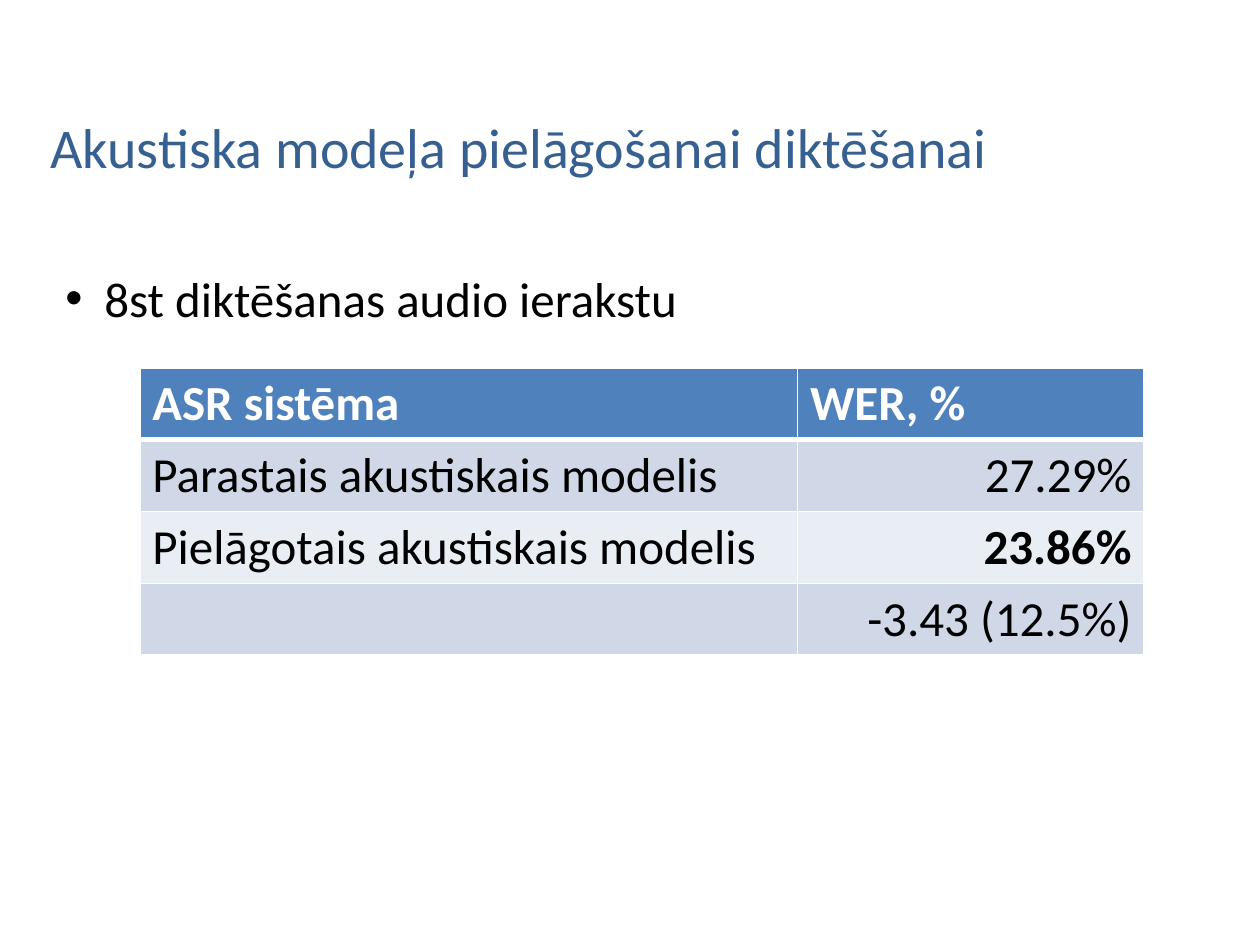
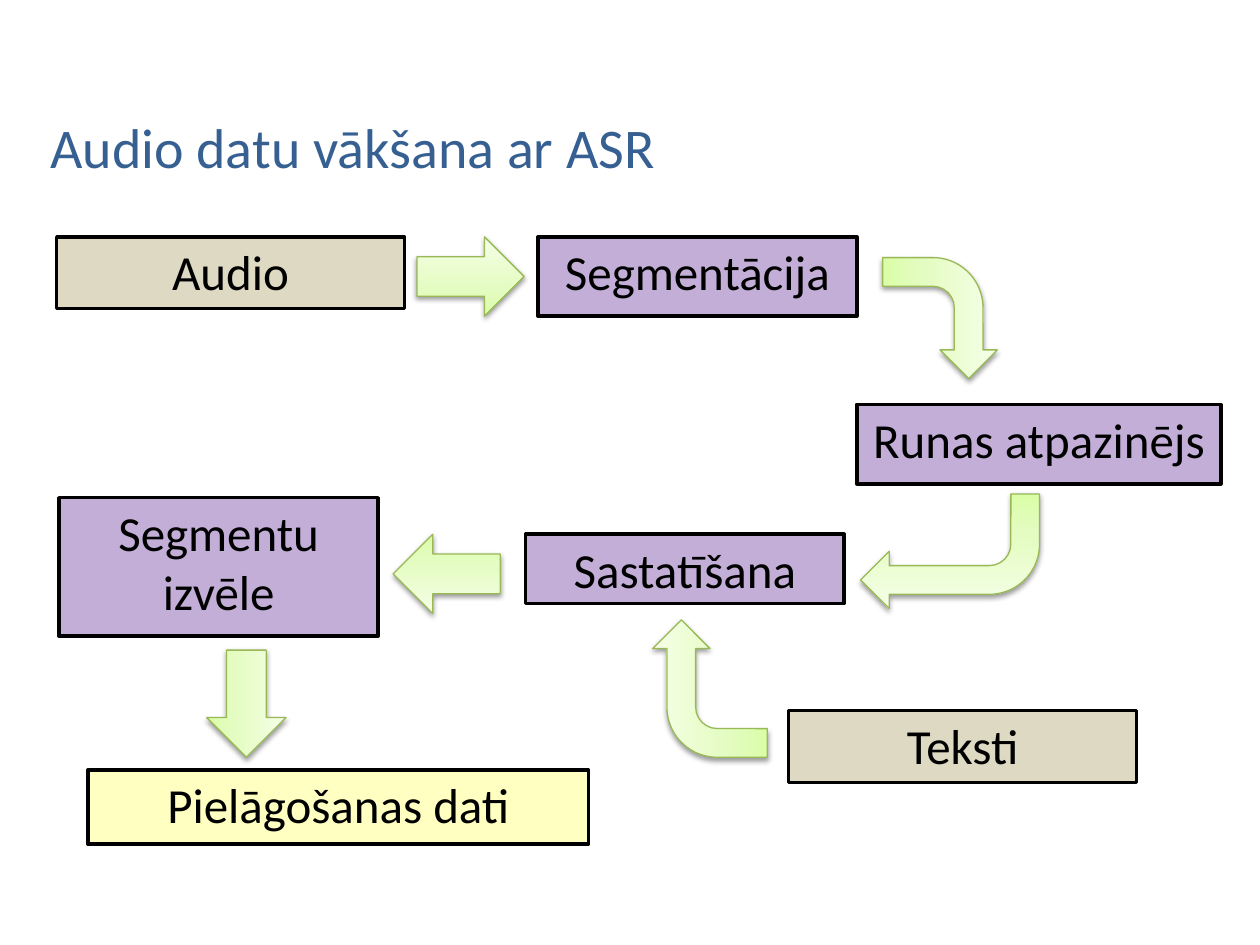
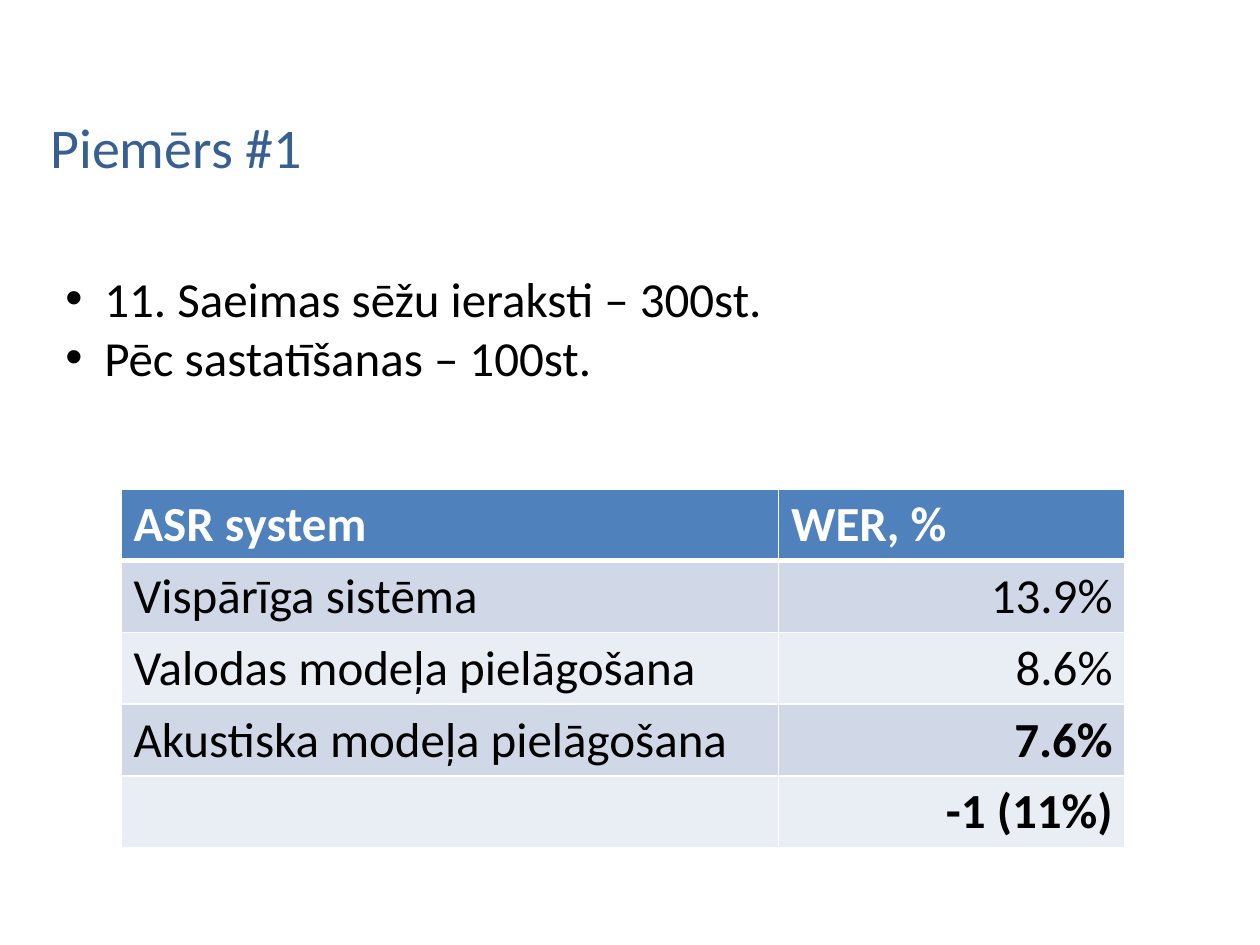
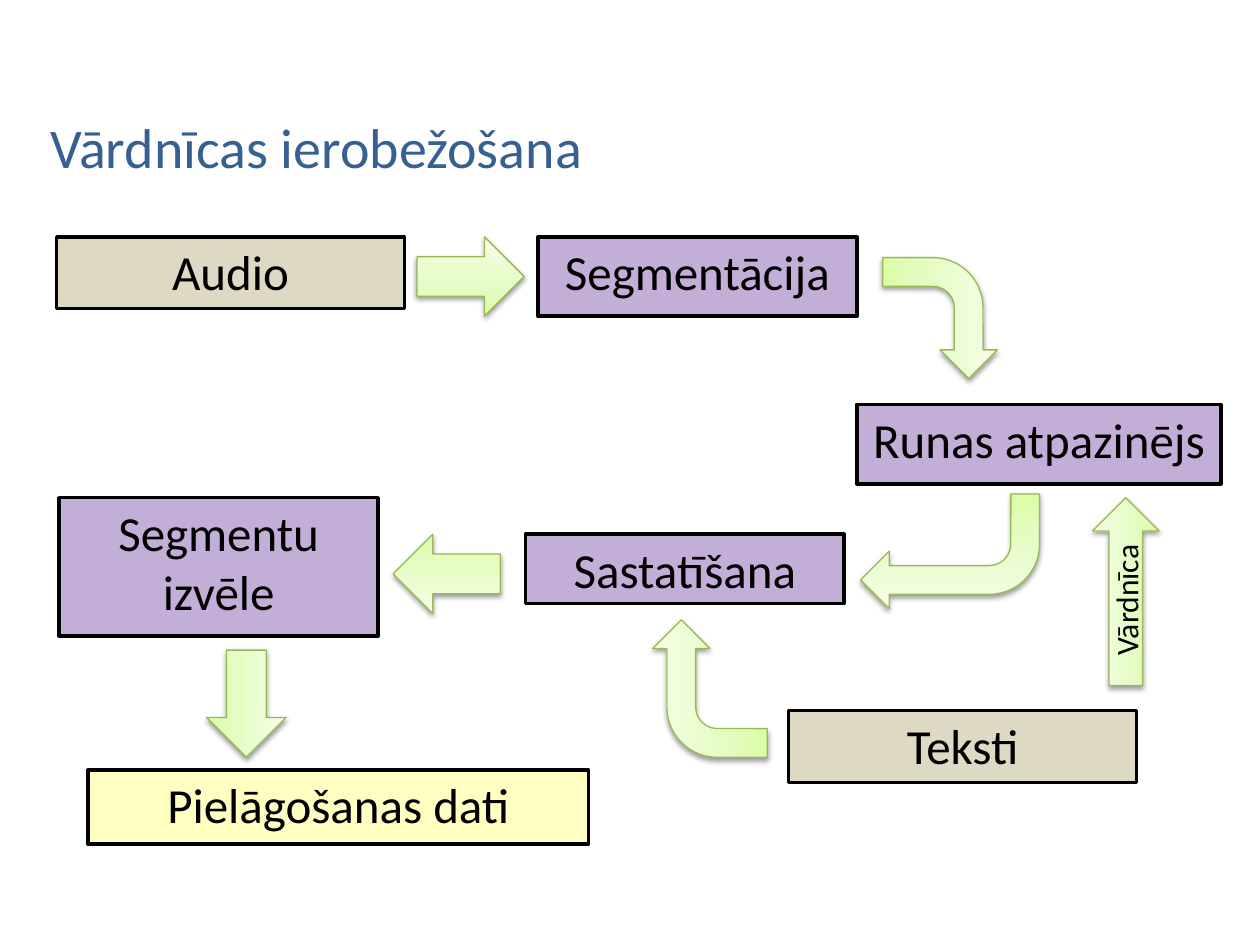
from dataclasses import dataclass

from lxml.etree import SubElement
from pptx import Presentation
from pptx.dml.color import RGBColor
from pptx.enum.shapes import MSO_SHAPE as SHAPE
from pptx.enum.text import MSO_ANCHOR as ANCHOR, MSO_AUTO_SIZE as AUTO, PP_ALIGN as ALIGN
from pptx.oxml.ns import qn
from pptx.util import Inches, Pt


@dataclass(frozen=True)
class Theme:
    font: str = "Calibri"
    title_size: int = 32
    body_size: int = 28
    label_size: int = 18
    title: str = "376092"
    text: str = "000000"
    white: str = "FFFFFF"
    header: str = "4F81BD"
    bands: tuple = ("D0D8E8", "E9EDF4")
    source: str = "DDD9C3"
    process: str = "C2AED7"
    result: str = "FFFFC2"
    arrow_stops: tuple = ((0, "DAFDA7"), (35, "E4FCC2"), (100, "F5FFE7"))
    arrow_line: str = "98B955"


@dataclass(frozen=True)
class Box:
    left: float
    top: float
    width: float
    height: float

    def inside(self, region):
        return Box(region.left + self.left, region.top + self.top, self.width, self.height)

    def lengths(self):
        return [Inches(v) for v in (self.left, self.top, self.width, self.height)]


THEME = Theme()
FLOW_REGION = Box(0.45, 1.88, 9.24, 4.82)

# Flow steps: text, colour, box within the flow region
STEPS = [
    ("Audio", THEME.source, Box(0, 0, 2.76, 0.57)),
    ("Segmentācija", THEME.process, Box(3.82, 0, 2.53, 0.63)),
    ("Runas atpazinējs", THEME.process, Box(6.35, 1.33, 2.89, 0.63)),
    ("Sastatīšana", THEME.process, Box(3.72, 2.36, 2.53, 0.55)),
    ("Segmentu izvēle", THEME.process, Box(0.02, 2.07, 2.53, 1.1)),
    ("Teksti", THEME.source, Box(5.81, 3.76, 2.76, 0.57)),
    ("Pielāgošanas dati", THEME.result, Box(0.25, 4.23, 3.97, 0.59)),
]

# Flow arrows: outline, rotation, unrotated box within the flow region
ARROWS = [
    (SHAPE.RIGHT_ARROW, 0, Box(2.86, 0, 0.85, 0.63)),
    (SHAPE.BENT_ARROW, 90, Box(6.53, 0.19, 0.96, 0.91)),
    (SHAPE.BENT_ARROW, 180, Box(6.38, 2.04, 1.42, 0.91)),
    (SHAPE.BENT_ARROW, 270, Box(4.64, 3.13, 1.09, 0.91)),
    (SHAPE.RIGHT_ARROW, 180, Box(2.67, 2.36, 0.85, 0.63)),
    (SHAPE.RIGHT_ARROW, 90, Box(1.08, 3.39, 0.85, 0.63)),
]
DICTIONARY_ARROW = (SHAPE.RIGHT_ARROW, 270, Box(7.74, 2.55, 1.49, 0.53))


def rgb(colour):
    return RGBColor.from_string(colour)


def set_font(paragraph, size, colour, bold=False):
    font = paragraph.font
    font.name, font.size, font.bold = THEME.font, Pt(size), bold
    font.color.rgb = rgb(colour)


def add_colour(parent, colour):
    return SubElement(parent, qn("a:srgbClr"), val=colour)


# Title
def add_titled_slide(deck, text, height=0.83):
    slide = deck.slides.add_slide(deck.slide_layouts[5])
    title = slide.shapes.title
    title.left, title.top, title.width, title.height = Box(0.3, 0.58, 9.17, height).lengths()
    frame = title.text_frame
    frame.text = text
    frame.vertical_anchor = ANCHOR.TOP
    frame.auto_size = AUTO.SHAPE_TO_FIT_TEXT
    heading = frame.paragraphs[0]
    heading.alignment, heading.line_spacing = ALIGN.LEFT, 1.5
    set_font(heading, THEME.title_size, THEME.title)
    return slide


# Bullet list
def add_bullets(slide, box, items):
    frame = slide.shapes.add_textbox(*box.lengths()).text_frame
    frame.word_wrap = True
    frame.auto_size = AUTO.SHAPE_TO_FIT_TEXT
    frame.text = "\n".join(items)
    indent = Inches(0.31)
    for bullet in frame.paragraphs:
        set_font(bullet, THEME.body_size, THEME.text)
        props = bullet._p.get_or_add_pPr()
        props.set("marL", str(indent))
        props.set("indent", str(-indent))
        font_tag, char_tag = (props.makeelement(qn(tag), {key: value}) for tag, key, value in
                              (("a:buFont", "typeface", "Arial"), ("a:buChar", "char", "•")))
        props.insert(0, font_tag)
        props.insert(1, char_tag)


# Results table
def set_borders(cell, top, bottom):
    props = cell._tc.get_or_add_tcPr()
    widths = {"a:lnL": 1, "a:lnR": 1, "a:lnT": top, "a:lnB": bottom}
    for place, (tag, width) in enumerate(widths.items()):
        line = props.makeelement(qn(tag), {"w": str(Pt(width))})
        add_colour(SubElement(line, qn("a:solidFill")), THEME.white)
        props.insert(place, line)


def add_results(slide, left, top, rows, bold_values):
    row_height, widths = 0.57, (5.22, 2.75)
    box = Box(left, top, sum(widths), row_height * len(rows))
    results = slide.shapes.add_table(len(rows), len(widths), *box.lengths()).table
    for column, width in zip(results.columns, widths):
        column.width = Inches(width)
    for r, row in enumerate(rows):
        is_header = r == 0
        for c, text in enumerate(row):
            cell = results.cell(r, c)
            cell.text = text
            cell.fill.solid()
            cell.fill.fore_color.rgb = rgb(THEME.header if is_header else THEME.bands[(r - 1) % 2])
            set_borders(cell, top=3 if r == 1 else 1, bottom=3 if is_header else 1)
            entry = cell.text_frame.paragraphs[0]
            entry.alignment = ALIGN.RIGHT if c and not is_header else ALIGN.LEFT
            set_font(entry, THEME.body_size, THEME.white if is_header else THEME.text,
                     is_header or text in bold_values)


# Flow diagram
def add_step(slide, box, text, colour):
    step = slide.shapes.add_shape(SHAPE.FLOWCHART_PROCESS, *box.lengths())
    step.shadow.inherit = False
    step.fill.solid()
    step.fill.fore_color.rgb = rgb(colour)
    step.line.color.rgb = rgb(THEME.text)
    step.line.width = Pt(2)
    frame = step.text_frame
    frame.margin_left = frame.margin_right = frame.margin_top = frame.margin_bottom = Inches(0.04)
    frame.vertical_anchor = ANCHOR.TOP
    frame.text = text
    frame.paragraphs[0].alignment = ALIGN.CENTER
    set_font(frame.paragraphs[0], THEME.body_size, THEME.text)


def add_arrow(slide, box, outline, rotation):
    arrow = slide.shapes.add_shape(outline, *box.lengths())
    arrow.rotation = rotation
    arrow.line.color.rgb = rgb(THEME.arrow_line)
    arrow.line.width = Pt(0.75)

    # Three-stop gradient running upwards
    arrow.fill.gradient()
    arrow.fill.gradient_angle = 90
    props = arrow._element.spPr
    stops = props.find(".//" + qn("a:gsLst"))
    stops.clear()
    for percent, colour in THEME.arrow_stops:
        add_colour(SubElement(stops, qn("a:gs"), pos=str(percent * 1000)), colour)

    # Soft shadow below
    arrow.shadow.inherit = False
    shadow = SubElement(props.find(qn("a:effectLst")), qn("a:outerShdw"), blurRad=str(Pt(3.1)),
                        dist=str(Pt(1.6)), dir="5400000", rotWithShape="0")
    SubElement(add_colour(shadow, THEME.text), qn("a:alpha"), val="38000")
    return arrow


def add_flow(slide, region):
    for text, colour, box in STEPS:
        add_step(slide, box.inside(region), text, colour)
    for outline, rotation, box in ARROWS:
        add_arrow(slide, box.inside(region), outline, rotation)


def add_dictionary_arrow(slide, region):
    outline, rotation, box = DICTIONARY_ARROW
    frame = add_arrow(slide, box.inside(region), outline, rotation).text_frame
    frame.text = "Vārdnīca"
    frame.vertical_anchor = ANCHOR.MIDDLE
    frame.paragraphs[0].alignment = ALIGN.CENTER
    set_font(frame.paragraphs[0], THEME.label_size, THEME.text)


def main():
    deck = Presentation()
    deck.slide_width, deck.slide_height = Inches(10), Inches(7.5)

    # Acoustic model adaptation
    adaptation = add_titled_slide(deck, "Akustiska modeļa pielāgošanai diktēšanai", 0.91)
    add_results(adaptation, 1.11, 2.92, [
        ("ASR sistēma", "WER, %"),
        ("Parastais akustiskais modelis", "27.29%"),
        ("Pielāgotais akustiskais modelis", "23.86%"),
        ("", "-3.43 (12.5%)"),
    ], bold_values={"23.86%"})
    add_bullets(adaptation, Box(0.42, 2.08, 9.05, 0.57), ["8st diktēšanas audio ierakstu"])

    # Audio collection
    add_flow(add_titled_slide(deck, "Audio datu vākšana ar ASR"), FLOW_REGION)

    # First example
    example = add_titled_slide(deck, "Piemērs #1", 1.72)
    add_bullets(example, Box(0.42, 2.08, 9.05, 1.04),
                ["11. Saeimas sēžu ieraksti – 300st.", "Pēc sastatīšanas – 100st."])
    add_results(example, 0.96, 3.88, [
        ("ASR system", "WER, %"),
        ("Vispārīga sistēma", "13.9%"),
        ("Valodas modeļa pielāgošana", "8.6%"),
        ("Akustiska modeļa pielāgošana", "7.6%"),
        ("", "-1 (11%)"),
    ], bold_values={"7.6%", "-1 (11%)"})

    # Restricted dictionary
    dictionary = add_titled_slide(deck, "Vārdnīcas ierobežošana")
    add_flow(dictionary, FLOW_REGION)
    add_dictionary_arrow(dictionary, FLOW_REGION)

    deck.save("out.pptx")


if __name__ == "__main__":
    main()
